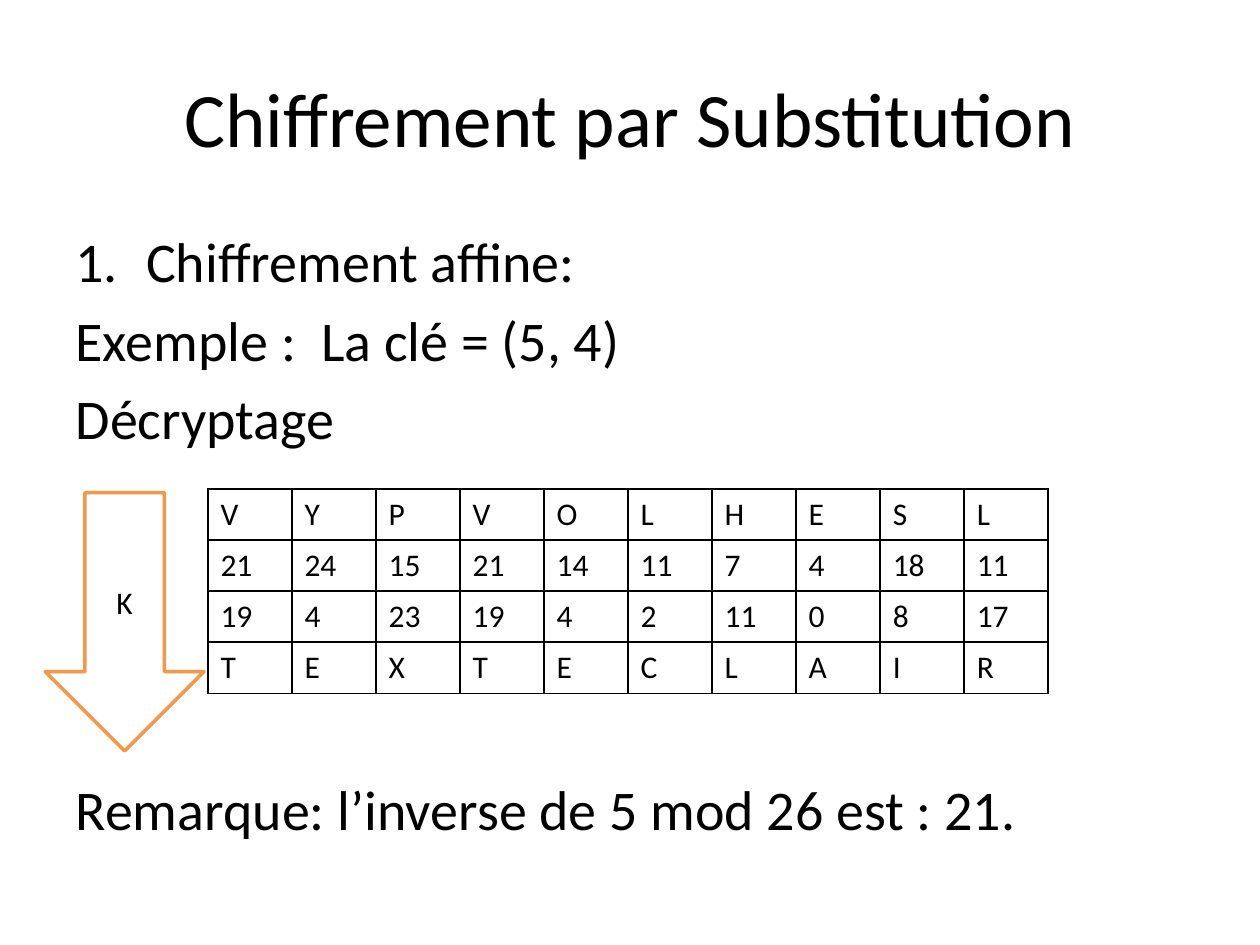
from pptx import Presentation
from pptx.dml.color import RGBColor
from pptx.enum.shapes import MSO_SHAPE
from pptx.enum.text import MSO_ANCHOR, MSO_AUTO_SIZE, PP_ALIGN
from pptx.oxml.ns import qn
from pptx.util import Inches, Pt
from lxml import etree

BLACK = RGBColor(0, 0, 0)
WHITE = RGBColor(255, 255, 255)
ORANGE = RGBColor(0xF7, 0x96, 0x46)
ARROW = MSO_SHAPE.DOWN_ARROW
MIDDLE = MSO_ANCHOR.MIDDLE
CENTER = PP_ALIGN.CENTER
NO_FIT = MSO_AUTO_SIZE.NONE


def style(par, size):
    look = {"name": "Calibri", "size": Pt(size), "bold": False}
    for key, value in look.items():
        setattr(par.font, key, value)
    par.font.color.rgb = BLACK


def place(shape, left, top, width, height):
    shape.left, shape.top = Inches(left), Inches(top)
    shape.width, shape.height = Inches(width), Inches(height)


deck = Presentation()
deck.slide_width, deck.slide_height = Inches(10), Inches(7.5)
slide = deck.slides.add_slide(deck.slide_layouts[1])

# Title
title = slide.shapes.title
place(title, 0.5, 0.3, 9, 1.25)
title.text_frame.text = "Chiffrement par Substitution"
title.text_frame.vertical_anchor = MIDDLE
head = title.text_frame.paragraphs[0]
head.alignment = CENTER
style(head, 44)

# Body: text, space before in points; the last line sits below the table
LINES = [
    ("Chiffrement affine:", 0),
    ("Exemple :  La clé = (5, 4)", 6.4),
    ("Décryptage", 6.4),
    ("Remarque: l’inverse de 5 mod 26 est : 21.", 185),
]
body = slide.placeholders[1]
place(body, 0.5, 1.75, 9, 4.95)
frame = body.text_frame
frame.auto_size = NO_FIT
frame.text = "\n".join(text for text, gap in LINES)
for row, (par, (text, gap)) in enumerate(zip(frame.paragraphs, LINES)):
    par.space_before = Pt(gap)
    props = par._p.get_or_add_pPr()
    indent = 0 if row else Inches(0.56)
    props.set("marL", str(indent))
    props.set("indent", str(-indent))
    if row:
        etree.SubElement(props, qn("a:buNone"))
    else:
        etree.SubElement(props, qn("a:buFont"), typeface="+mj-lt")
        etree.SubElement(props, qn("a:buAutoNum"), type="arabicPeriod")
    style(par, 32)

# Decryption table: cipher letters, their ranks, decoded ranks, plain letters
ROWS = [
    "V Y P V O L H E S L".split(),
    "21 24 15 21 14 11 7 4 18 11".split(),
    "19 4 23 19 4 2 11 0 8 17".split(),
    "T E X T E C L A I R".split(),
]
COLS = len(ROWS[0])
table = slide.shapes.add_table(
    len(ROWS), COLS, Inches(1.65), Inches(3.88),
    Inches(6.67), Inches(1.62)).table
table.first_row = table.horz_banding = False
for r, texts in enumerate(ROWS):
    for c, text in enumerate(texts):
        cell = table.cell(r, c)
        cell.text = text
        style(cell.text_frame.paragraphs[0], 18)
        props = cell._tc.get_or_add_tcPr()
        for side in ("a:lnL", "a:lnR", "a:lnT", "a:lnB"):
            edge = etree.SubElement(props, qn(side), w=str(Pt(1)))
            paint = etree.SubElement(edge, qn("a:solidFill"))
            etree.SubElement(paint, qn("a:srgbClr"), val=str(BLACK))
        cell.fill.background()

# Key arrow
arrow = slide.shapes.add_shape(
    ARROW, Inches(0.36), Inches(3.91), Inches(1.26), Inches(2.05))
arrow.shadow.inherit = False
arrow.fill.solid()
arrow.fill.fore_color.rgb = WHITE
arrow.line.color.rgb = ORANGE
arrow.line.width = Pt(2)
arrow.text_frame.text = "K"
arrow.text_frame.vertical_anchor = MIDDLE
key = arrow.text_frame.paragraphs[0]
key.alignment = CENTER
style(key, 18)

deck.save("out.pptx")
